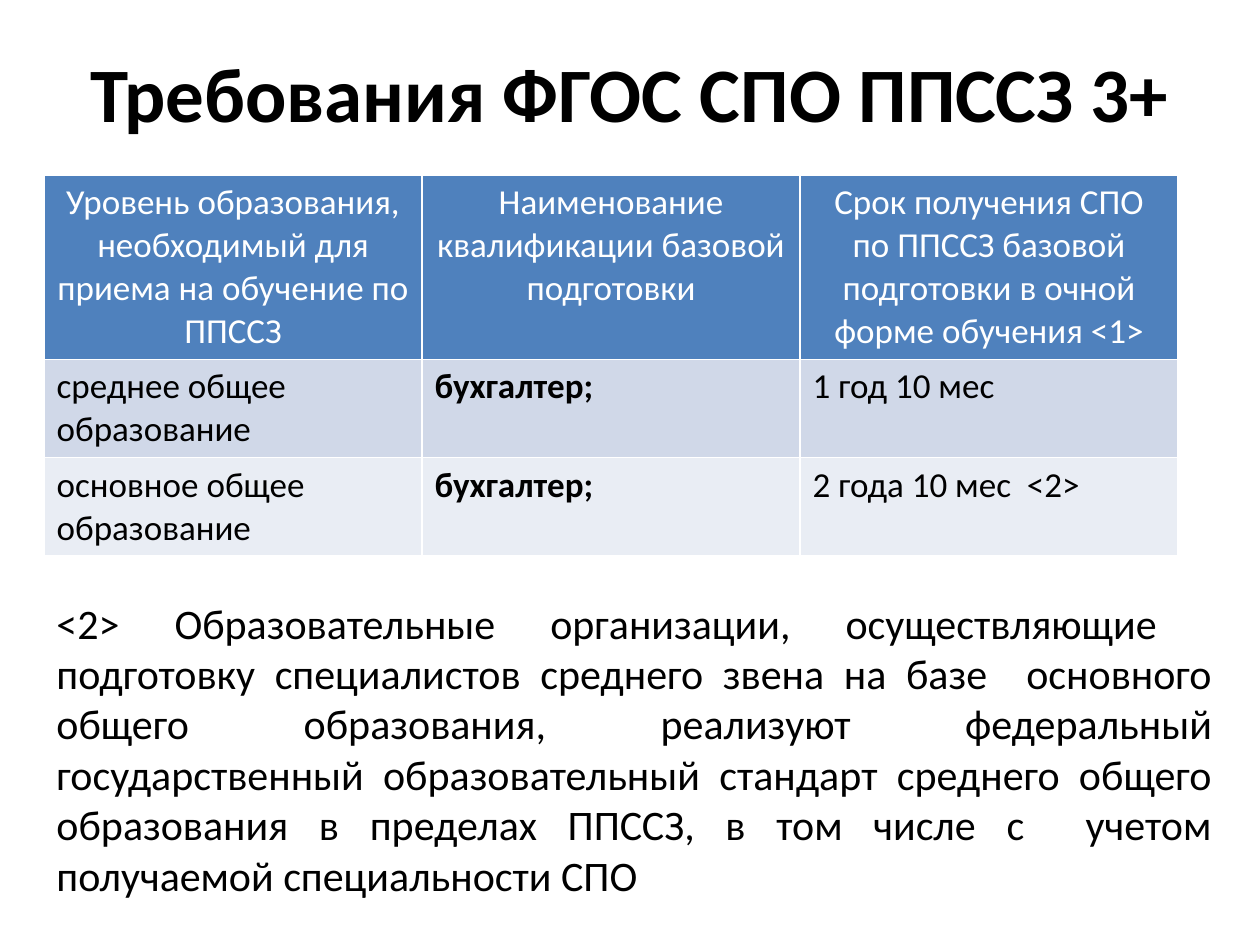
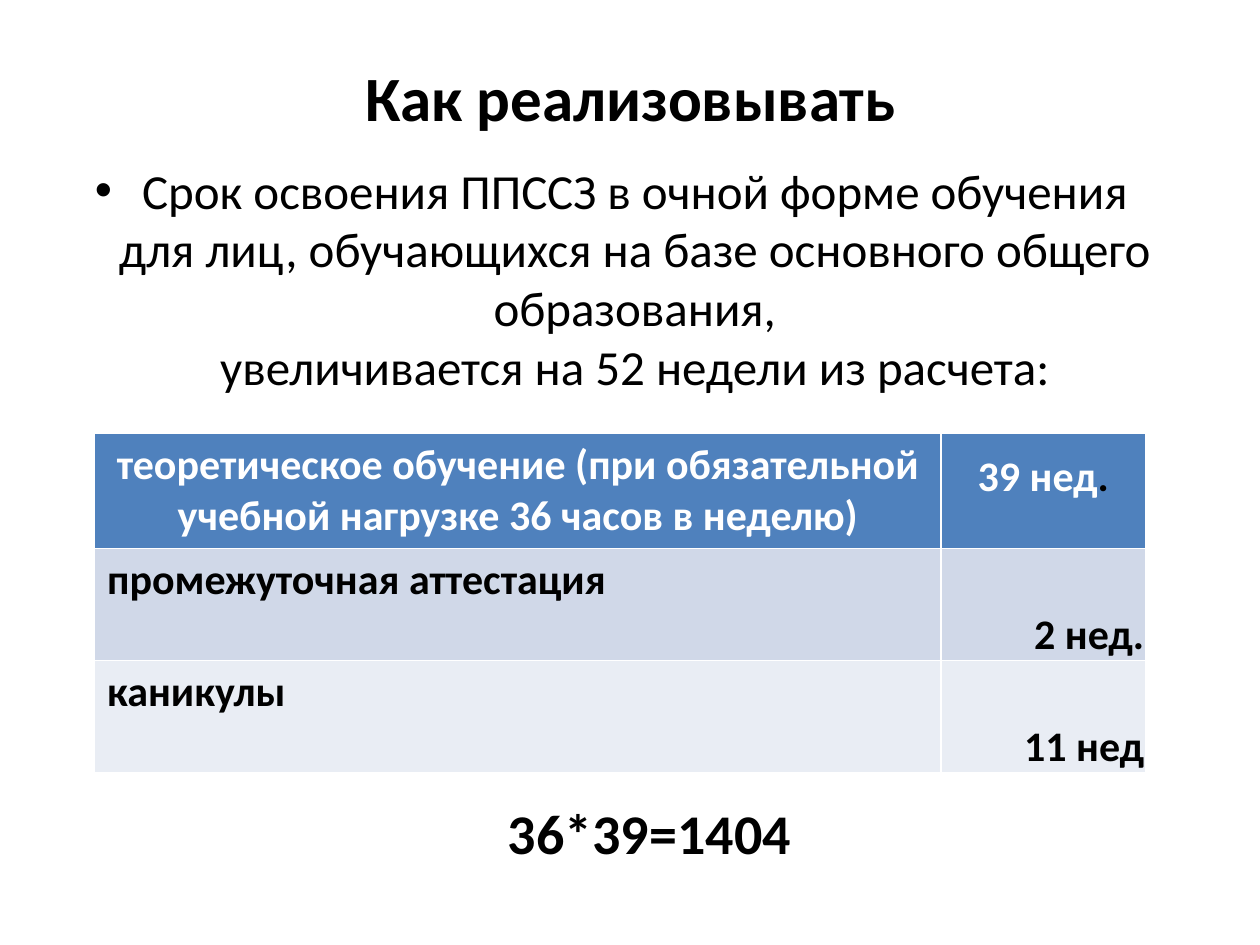
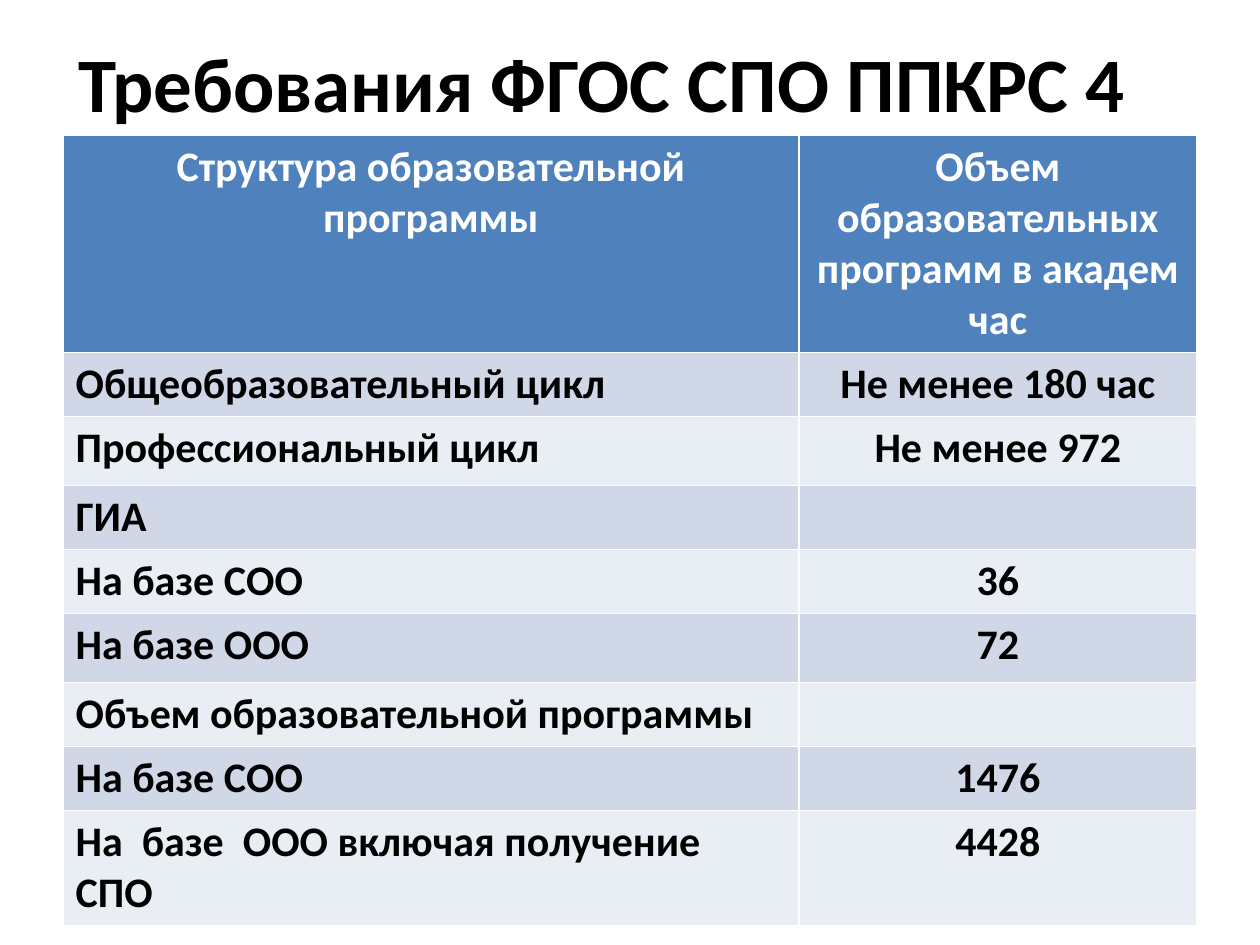
from pptx import Presentation
from pptx.util import Inches, Pt
from pptx.dml.color import RGBColor
from pptx.enum.text import MSO_ANCHOR, MSO_AUTO_SIZE, PP_ALIGN

FONT = "Calibri"
COLORS = {"text": "000000", "header_text": "FFFFFF", "header": "4F81BD",
          "odd_row": "D0D8E8", "even_row": "E9EDF4"}
LEFT, CENTER, RIGHT, JUSTIFY = (PP_ALIGN.LEFT, PP_ALIGN.CENTER,
                                PP_ALIGN.RIGHT, PP_ALIGN.JUSTIFY)
TITLE_ONLY, TITLE_AND_BODY = 5, 1

TERMS = [
    ("Уровень образования, необходимый для приема на обучение по ППССЗ",
     "Наименование квалификации базовой подготовки",
     "Срок получения СПО по ППССЗ базовой подготовки в очной форме обучения <1>"),
    ("среднее общее образование", "бухгалтер;", "1 год 10 мес"),
    ("основное общее образование", "бухгалтер;", "2 года 10 мес  <2>"),
]
FOOTNOTE = (
    "<2> Образовательные организации, осуществляющие  подготовку специалистов "
    "среднего звена на базе  основного общего образования, реализуют федеральный\n"
    "государственный образовательный стандарт среднего общего образования "
    "в пределах ППССЗ, в том числе с  учетом получаемой специальности СПО")

EXTENSION = ("Срок освоения ППССЗ в очной форме обучения для лиц, обучающихся на базе "
             "основного общего образования,\nувеличивается на 52 недели из расчета:")
WEEKS = [
    ("теоретическое обучение (при обязательной учебной нагрузке 36 часов в неделю)",
     "39 нед"),
    ("промежуточная аттестация", "2 нед."),
    ("каникулы", "11 нед"),
]
HOURS_TOTAL = "36*39=1404"

STRUCTURE = [
    ("Структура образовательной программы",
     "Объем образовательных программ в академ час"),
    ("Общеобразовательный цикл", "Не менее 180 час"),
    ("Профессиональный цикл", "Не менее 972"),
    ("ГИА", ""),
    ("На базе СОО", "36"),
    ("На базе ООО", "72"),
    ("Объем образовательной программы", ""),
    ("На базе СОО", "1476"),
    ("На  базе  ООО включая получение СПО", "4428"),
]


def rgb(name):
    return RGBColor.from_string(COLORS[name])


def format_runs(p, size, bold=False, color="text"):
    for r in p.runs:
        r.font.name = FONT
        r.font.size = Pt(size)
        r.font.bold = bold
        r.font.color.rgb = rgb(color)


def place(sp, box):
    sp.left, sp.top, sp.width, sp.height = (Inches(v) for v in box)


def write(sp, content, size, align, bold=False):
    p = sp.text_frame.paragraphs[0]
    p.text = content
    p.alignment = align
    p.space_before = Pt(0)
    format_runs(p, size, bold)


def add_slide(prs, layout, title, box, size):
    s = prs.slides.add_slide(prs.slide_layouts[layout])
    sp = s.shapes.title
    place(sp, box)
    sp.text_frame.auto_size = MSO_AUTO_SIZE.NONE
    sp.text_frame.vertical_anchor = MSO_ANCHOR.MIDDLE
    write(sp, title, size, CENTER, True)
    return s


def add_note(s, content, box, size, align, bold=False):
    sp = s.shapes.add_textbox(*(Inches(v) for v in box))
    sp.text_frame.word_wrap = True
    sp.text_frame.auto_size = MSO_AUTO_SIZE.SHAPE_TO_FIT_TEXT
    write(sp, content, size, align, bold)


def add_grid(s, rows, at, widths, heights, size, aligns, bolds, header_bold=True):
    """Add a banded table; aligns and bolds give one value per body column."""
    frame = s.shapes.add_table(len(rows), len(widths), Inches(at[0]), Inches(at[1]),
                               Inches(sum(widths)), Inches(sum(heights)))
    table = frame.table
    for column, width in zip(table.columns, widths):
        column.width = Inches(width)
    for i, (row, height) in enumerate(zip(rows, heights)):
        table.rows[i].height = Inches(height)
        band = "header" if i == 0 else "odd_row" if i % 2 else "even_row"
        for j, content in enumerate(row):
            cell = table.cell(i, j)
            cell.fill.solid()
            cell.fill.fore_color.rgb = rgb(band)
            p = cell.text_frame.paragraphs[0]
            p.text = content
            p.alignment = aligns[j] if i else CENTER
            format_runs(p, size, bolds[j] if i else header_bold,
                        "text" if i else "header_text")
    return table


def tighten_weeks(table):
    """Set the narrow week column with tight lines and almost no margins."""
    for i in range(len(table.rows)):
        cell = table.cell(i, 1)
        cell.vertical_anchor = MSO_ANCHOR.BOTTOM if i else MSO_ANCHOR.MIDDLE
        cell.margin_left = cell.margin_right = Inches(0.01)
        cell.margin_top = cell.margin_bottom = 0
        p = cell.text_frame.paragraphs[0]
        p.line_spacing = Pt(13)
        pPr = p._p.get_or_add_pPr()
        pPr.set("marL", "0")
        pPr.set("indent", str(Inches(-0.28)))


def build_terms(prs):
    s = add_slide(prs, TITLE_ONLY, "Требования ФГОС СПО ППССЗ 3+",
                  (0.5, 0.3, 9, 0.85), 44)
    add_grid(s, TERMS, (0.35, 1.39), [3] * 3, [0.41] * 3, 20,
             [LEFT] * 3, [False, True, False], header_bold=False)
    add_note(s, FOOTNOTE, (0.35, 4.69, 9.37, 2.52), 24, JUSTIFY)


def build_weeks(prs):
    s = add_slide(prs, TITLE_AND_BODY, "Как реализовывать",
                  (0.51, 0.3, 8.99, 0.93), 36)
    body = s.placeholders[1]
    place(body, (0.35, 1.22, 9, 5.47))
    body.text_frame.auto_size = MSO_AUTO_SIZE.NONE
    write(body, EXTENSION, 28, CENTER)
    table = add_grid(s, WEEKS, (0.75, 3.44), [6.72, 1.62], [0.89] * 3, 24,
                     [LEFT, RIGHT], [True] * 2)
    tighten_weeks(table)
    p = table.cell(0, 1).text_frame.paragraphs[0]
    r = p.add_run()
    r.text = "."
    format_runs(p, 24, True, "header_text")
    r.font.color.rgb = rgb("text")
    add_note(s, HOURS_TOTAL, (1.06, 6.29, 8.19, 0.64), 32, CENTER, True)


def build_structure(prs):
    s = add_slide(prs, TITLE_ONLY, "Требования ФГОС СПО ППКРС 4",
                  (0.28, 0.21, 9, 0.87), 44)
    heights = [0.55 if i in (2, 5) else 0.41 for i in range(len(STRUCTURE))]
    add_grid(s, STRUCTURE, (0.5, 1.07), [5.84, 3.16], heights, 24,
             [LEFT, CENTER], [True] * 2)


def main():
    prs = Presentation()
    prs.slide_width, prs.slide_height = Inches(10), Inches(7.5)
    build_terms(prs)
    build_weeks(prs)
    build_structure(prs)
    prs.save("out.pptx")


if __name__ == "__main__":
    main()
